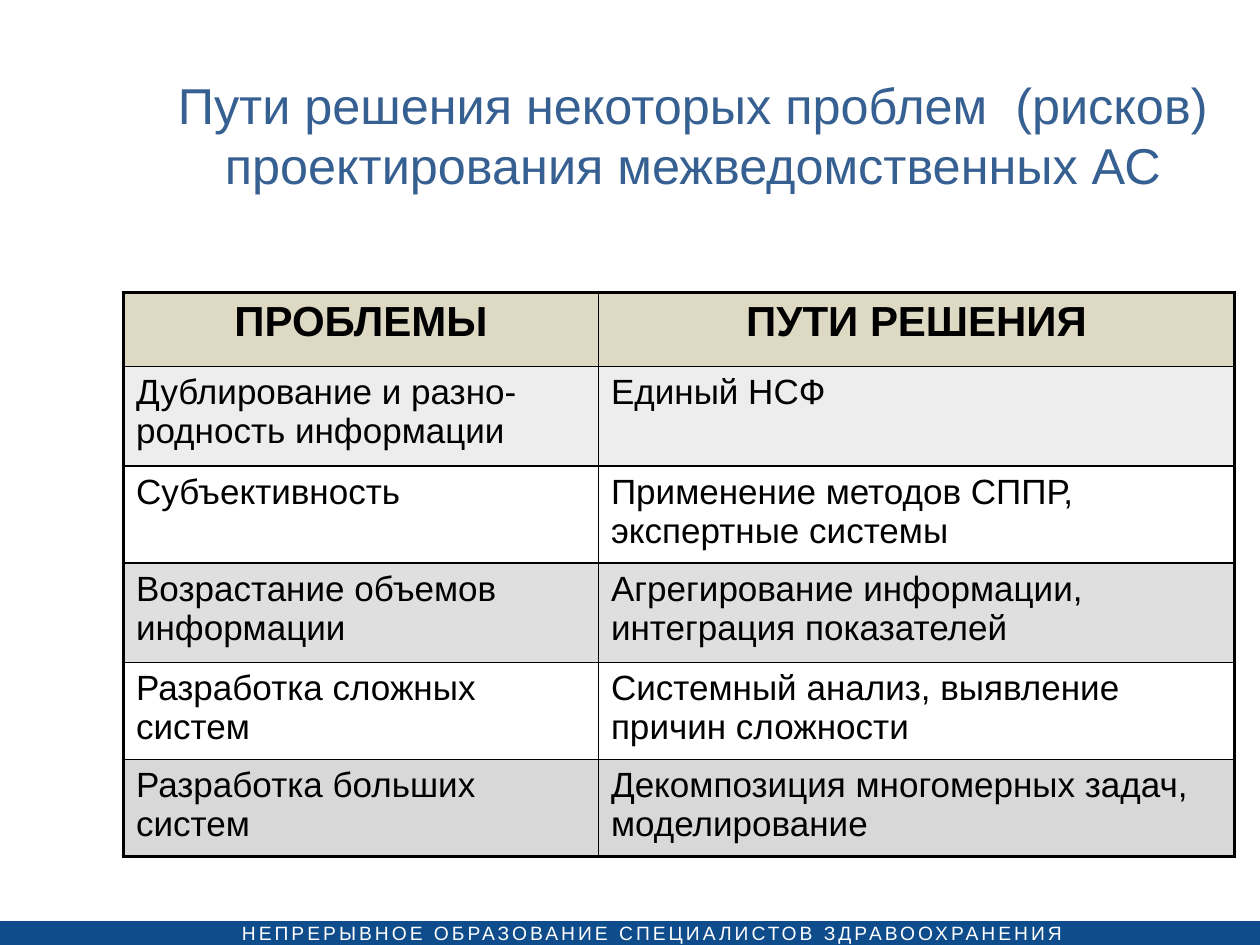
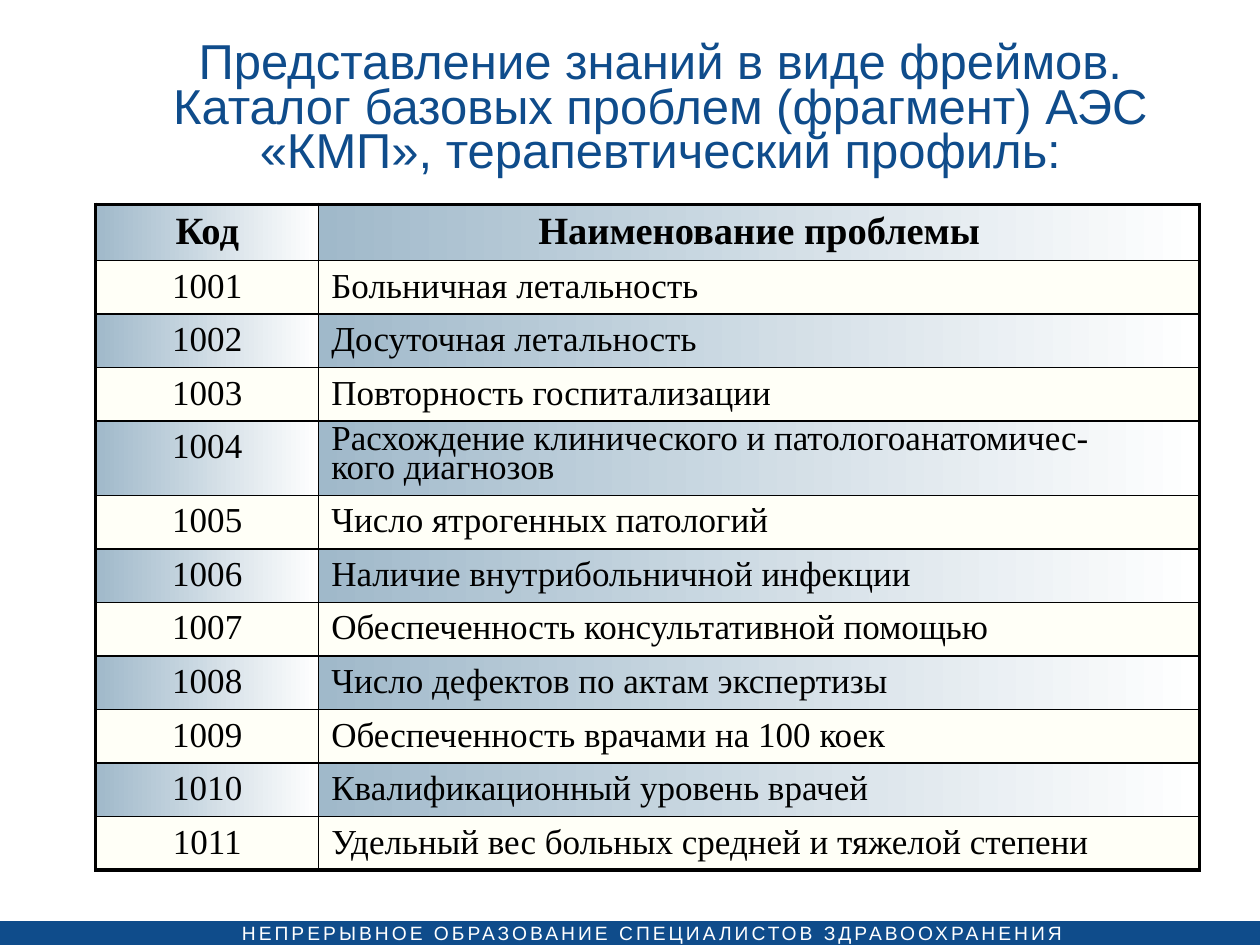
from lxml import etree
from pptx import Presentation
from pptx.dml.color import RGBColor
from pptx.enum import shapes, text
from pptx.oxml import ns
from pptx.util import Inches, Pt

COLORS = {
    "band": "0F4C8B",
    "title": "376092",
    "white": "FFFFFF",
    "black": "000000",
    "beige": "DDD9C3",
    "light": "DDDDDD",
    "middle": "C0C0C0",
    "dark": "B2B2B2",
    "steel": "A0B9CA",
    "cream": "FFFFF7",
}
SANS = "Arial"
SERIF = "Times New Roman"
FOOTER = "НЕПРЕРЫВНОЕ ОБРАЗОВАНИЕ СПЕЦИАЛИСТОВ ЗДРАВООХРАНЕНИЯ"

RISKS_TITLE = "Пути решения некоторых проблем  (рисков) проектирования межведомственных АС"
RISKS = [
    ("ПРОБЛЕМЫ", "ПУТИ РЕШЕНИЯ"),
    ("Дублирование и разно-родность информации", "Единый НСФ"),
    ("Субъективность", "Применение методов СППР, экспертные системы"),
    ("Возрастание объемов информации", "Агрегирование информации, интеграция показателей"),
    ("Разработка сложных систем", "Системный анализ, выявление причин сложности"),
    ("Разработка больших систем", "Декомпозиция многомерных задач, моделирование"),
]
RISK_FILLS = ["beige", "light", None, "middle", None, "dark"]
RISK_HEIGHTS = [0.59, 0.79, 0.77, 0.79, 0.77, 0.77]

CATALOG_TITLE = (
    "Представление знаний в виде фреймов.\v"
    "Каталог базовых проблем (фрагмент) АЭС «КМП», терапевтический профиль:"
)
FIRST_CODE = 1001
PROBLEMS = [
    "Больничная летальность",
    "Досуточная летальность",
    "Повторность госпитализации",
    "Расхождение клинического и патологоанатомичес-\nкого диагнозов",
    "Число ятрогенных патологий",
    "Наличие внутрибольничной инфекции",
    "Обеспеченность консультативной помощью",
    "Число дефектов по актам экспертизы",
    "Обеспеченность врачами на 100 коек",
    "Квалификационный уровень врачей",
    "Удельный вес больных средней и тяжелой степени",
]
CATALOG = [("Код", "Наименование проблемы")] + [
    (str(code), name) for code, name in enumerate(PROBLEMS, FIRST_CODE)
]
CATALOG_HEIGHT = 5.28
HEADER_ROW = 0.44
TALL_ROW = 0.59


def rgb(name):
    return RGBColor.from_string(COLORS[name])


def style(para, font, size, color, bold=False):
    for span in para.runs:
        span.font.name = font
        span.font.size = Pt(size)
        span.font.bold = bold
        span.font.color.rgb = rgb(color)


def add_footer(page):
    band = page.shapes.add_shape(
        shapes.MSO_SHAPE.RECTANGLE, Inches(-0.04), Inches(7.31), Inches(10.04), Inches(0.22)
    )
    band.shadow.inherit = False
    band.fill.solid()
    band.fill.fore_color.rgb = rgb("band")
    band.line.fill.background()
    box = page.shapes.add_textbox(Inches(1.92), Inches(7.31), Inches(6.63), Inches(0.19))
    frame = box.text_frame
    frame.word_wrap = True
    frame.margin_left = frame.margin_right = frame.margin_top = frame.margin_bottom = 0
    frame.text = FOOTER
    para = frame.paragraphs[0]
    style(para, SANS, 11, "white")
    para.runs[0].font._element.set("spc", "170")


def add_page(deck, title, place, size, color, spacing=1.0):
    page = deck.slides.add_slide(deck.slide_layouts[5])
    add_footer(page)
    heading = page.shapes.title
    heading.left, heading.top, heading.width, heading.height = map(Inches, place)
    frame = heading.text_frame
    frame.text = title
    frame.word_wrap = True
    frame.auto_size = text.MSO_AUTO_SIZE.NONE
    frame.vertical_anchor = text.MSO_ANCHOR.MIDDLE
    para = frame.paragraphs[0]
    para.alignment = text.PP_ALIGN.CENTER
    para.line_spacing = spacing
    style(para, SANS, size, color)
    return page


def add_grid(page, rows, left, top, widths, heights, frame_width):
    shape = page.shapes.add_table(
        len(rows), len(widths), Inches(left), Inches(top),
        Inches(sum(widths)), Inches(sum(heights)),
    )
    table = shape.table
    table.first_row = table.horz_banding = False
    for column, width in zip(table.columns, widths):
        column.width = Inches(width)
    for row, height in zip(table.rows, heights):
        row.height = Inches(height)
    last_row, last_column = len(rows) - 1, len(widths) - 1
    for i, row in enumerate(rows):
        for j, words in enumerate(row):
            cell = table.cell(i, j)
            cell.text_frame.text = words
            cell.margin_bottom = Inches(0.03)
            edges = {"L": j == 0, "R": j == last_column, "T": i == 0, "B": i == last_row}
            for side, outer in edges.items():
                add_border(cell, side, frame_width if outer else 1)
    return table


def add_border(cell, side, width):
    props = cell._tc.get_or_add_tcPr()
    line = etree.SubElement(props, ns.qn("a:ln" + side), w=str(Pt(width)))
    fill = etree.SubElement(line, ns.qn("a:solidFill"))
    etree.SubElement(fill, ns.qn("a:srgbClr"), val=COLORS["black"])


def fill_solid(cell, color, opacity=100):
    cell.fill.solid()
    cell.fill.fore_color.rgb = rgb(color)
    if opacity < 100:
        tint = cell._tc.tcPr.find(ns.qn("a:solidFill")).find(ns.qn("a:srgbClr"))
        etree.SubElement(tint, ns.qn("a:alpha"), val=str(opacity * 1000))


def fill_gradient(cell, start, end):
    cell.fill.gradient()
    cell.fill.gradient_angle = 0
    for stop, color, position in zip(cell.fill.gradient_stops, (start, end), (0, 1)):
        stop.color.rgb = rgb(color)
        stop.position = position


def format_cell(cell, font, size, bold, centered):
    for para in cell.text_frame.paragraphs:
        para.alignment = text.PP_ALIGN.CENTER if centered else text.PP_ALIGN.LEFT
        style(para, font, size, "black", bold)


def build_risks(deck):
    page = add_page(deck, RISKS_TITLE, (1, 0.44, 9, 1.25), 28.8, "title")
    table = add_grid(page, RISKS, 0.98, 2.32, [3.77, 5.05], RISK_HEIGHTS, 2.25)
    for i, color in enumerate(RISK_FILLS):
        header = i == 0
        for cell in table.rows[i].cells:
            format_cell(cell, SANS, 24 if header else 20, header, header)
            if color:
                fill_solid(cell, color, 100 if header else 50)
            else:
                cell.fill.background()


def build_catalog(deck):
    page = add_page(deck, CATALOG_TITLE, (0.98, 0.29, 8.52, 1.18), 28, "band", 0.75)
    row_height = (CATALOG_HEIGHT - HEADER_ROW - TALL_ROW) / (len(PROBLEMS) - 1)
    heights = [HEADER_ROW] + [TALL_ROW if "\n" in name else row_height for name in PROBLEMS]
    table = add_grid(page, CATALOG, 0.76, 1.62, [1.77, 6.99], heights, 2)
    for i, row in enumerate(table.rows):
        header = i == 0
        for j, cell in enumerate(row.cells):
            format_cell(cell, SERIF, 22 if header else 20, header, header or j == 0)
            paras = cell.text_frame.paragraphs
            if len(paras) > 1:
                for para in paras:
                    para.line_spacing = 0.75
            if i % 2:
                fill_solid(cell, "cream")
            else:
                fill_gradient(cell, "steel", "white")


def main():
    deck = Presentation()
    deck.slide_width, deck.slide_height = Inches(10), Inches(7.5)
    build_risks(deck)
    build_catalog(deck)
    deck.save("out.pptx")


if __name__ == "__main__":
    main()
